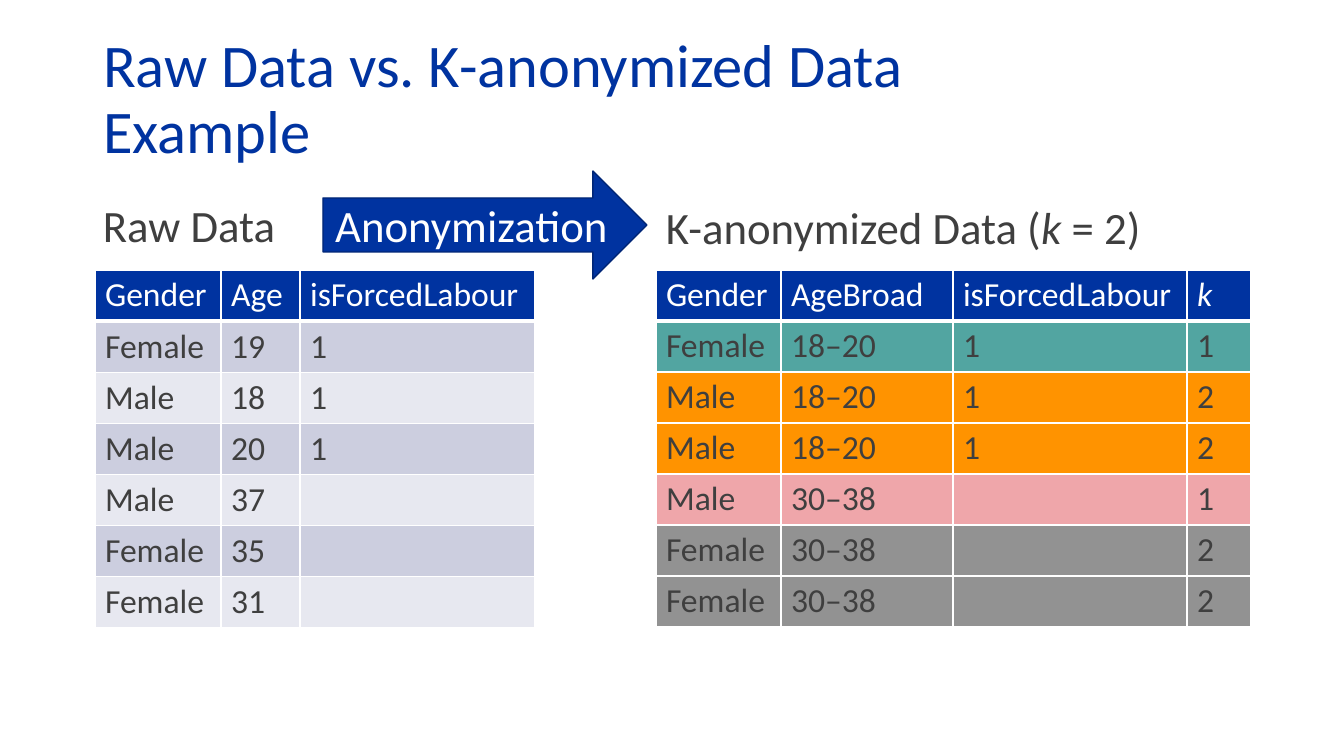
from lxml.etree import SubElement
from pptx import Presentation
from pptx.dml.color import RGBColor
from pptx.enum.shapes import MSO_SHAPE
from pptx.enum.text import MSO_ANCHOR, MSO_AUTO_SIZE, PP_ALIGN
from pptx.oxml import parse_xml
from pptx.oxml.ns import nsdecls
from pptx.util import Emu, Pt

WHITE = RGBColor(0xFF, 0xFF, 0xFF)
BLUE = RGBColor(0x00, 0x33, 0xA0)
NAVY = RGBColor(0x00, 0x26, 0x76)
INK = RGBColor(0x3F, 0x3F, 0x3F)
DARK = RGBColor(0xCC, 0xCE, 0xDF)
LIGHT = RGBColor(0xE7, 0xE8, 0xF0)
TEAL = RGBColor(0x52, 0xA5, 0xA1)
ORANGE = RGBColor(0xFF, 0x93, 0x00)
PINK = RGBColor(0xEF, 0xA6, 0xAA)
GREY = RGBColor(0x92, 0x92, 0x92)

FONT = "Calibri"
ROW = 51

RAW = [
    ["Gender", "Age", "isForcedLabour"],
    ["Female", "19", "1"],
    ["Male", "18", "1"],
    ["Male", "20", "1"],
    ["Male", "37", ""],
    ["Female", "35", ""],
    ["Female", "31", ""],
]
ANON = [
    ["Gender", "AgeBroad", "isForcedLabour", "k"],
    ["Female", "18–20", "1", "1"],
    ["Male", "18–20", "1", "2"],
    ["Male", "18–20", "1", "2"],
    ["Male", "30–38", "", "1"],
    ["Female", "30–38", "", "2"],
    ["Female", "30–38", "", "2"],
]


def px(n):
    return Emu(round(n * 12192000 / 1344))


def place(box):
    return [px(n) for n in box]


def style(runs, size, color):
    for run in runs:
        run.font.name = FONT
        run.font.size = Pt(size)
        run.font.color.rgb = color
        run.font.italic = run.text == "k"


def add_title(slide, box):
    title = slide.shapes.title
    title.left, title.top, title.width, title.height = place(box)
    frame = title.text_frame
    frame.text = "Raw Data vs. K-anonymized Data\vExample"
    frame.auto_size = MSO_AUTO_SIZE.NONE
    frame.vertical_anchor = MSO_ANCHOR.MIDDLE
    para = frame.paragraphs[0]
    para.alignment = PP_ALIGN.LEFT
    para.line_spacing = 0.9
    style(para.runs, 43.2, BLUE)


def add_label(slide, box, parts):
    frame = slide.shapes.add_textbox(*place(box)).text_frame
    frame.word_wrap = True
    para = frame.paragraphs[0]
    para.line_spacing = 0.9
    for part in parts:
        para.add_run().text = part
    style(para.runs, 32, INK)


def add_edges(cell, top, bottom):
    """Draw white lines round a cell, with widths in points."""
    props = cell._tc.get_or_add_tcPr()
    widths = {"lnL": 1, "lnR": 1, "lnT": top, "lnB": bottom}
    for i, (tag, width) in enumerate(widths.items()):
        line = parse_xml(f'<a:{tag} {nsdecls("a")} w="{Pt(width)}"/>')
        space = "{" + line.nsmap["a"] + "}"
        fill = SubElement(line, space + "solidFill")
        SubElement(fill, space + "srgbClr", val=str(WHITE))
        props.insert(i, line)


def add_grid(slide, left, top, widths, rows, fills):
    box = (left, top, sum(widths), ROW * len(rows))
    table = slide.shapes.add_table(len(rows), len(widths), *place(box)).table
    for col, width in zip(table.columns, widths):
        col.width = px(width)
    for r, (row, color) in enumerate(zip(rows, [BLUE] + fills)):
        table.rows[r].height = px(ROW)
        for c, text in enumerate(row):
            cell = table.cell(r, c)
            cell.fill.solid()
            cell.fill.fore_color.rgb = color
            add_edges(cell, 3 if r == 1 else 1, 3 if r == 0 else 1)
            para = cell.text_frame.paragraphs[0]
            para.text = text
            para.font.size = Pt(24)
            style(para.runs, 24, INK if r else WHITE)
            for run in para.runs:
                run.font.bold = False


def add_arrow(slide, box):
    arrow = slide.shapes.add_shape(MSO_SHAPE.RIGHT_ARROW, *place(box))
    arrow.shadow.inherit = False
    arrow.fill.solid()
    arrow.fill.fore_color.rgb = BLUE
    arrow.line.color.rgb = NAVY
    arrow.line.width = Pt(1)
    frame = arrow.text_frame
    frame.text = "Anonymization"
    frame.vertical_anchor = MSO_ANCHOR.MIDDLE
    para = frame.paragraphs[0]
    para.alignment = PP_ALIGN.CENTER
    style(para.runs, 32, WHITE)


def main():
    deck = Presentation()
    deck.slide_width, deck.slide_height = px(1344), px(756)
    slide = deck.slides.add_slide(deck.slide_layouts[5])
    add_title(slide, (93, 40, 1159, 122))

    # Raw data on the left
    add_grid(slide, 95, 270, [126, 79, 235], RAW, [DARK, LIGHT] * 3)
    add_label(slide, (93, 199, 535, 91), ["Raw Data"])

    # Anonymized data on the right
    add_label(slide, (656, 201, 535, 91),
              ["K-anonymized Data (", "k", " = 2)"])
    add_arrow(slide, (323, 171, 324, 108))
    add_grid(slide, 656, 270, [125, 172, 234, 64], ANON,
             [TEAL, ORANGE, ORANGE, PINK, GREY, GREY])
    deck.save("out.pptx")


if __name__ == "__main__":
    main()
